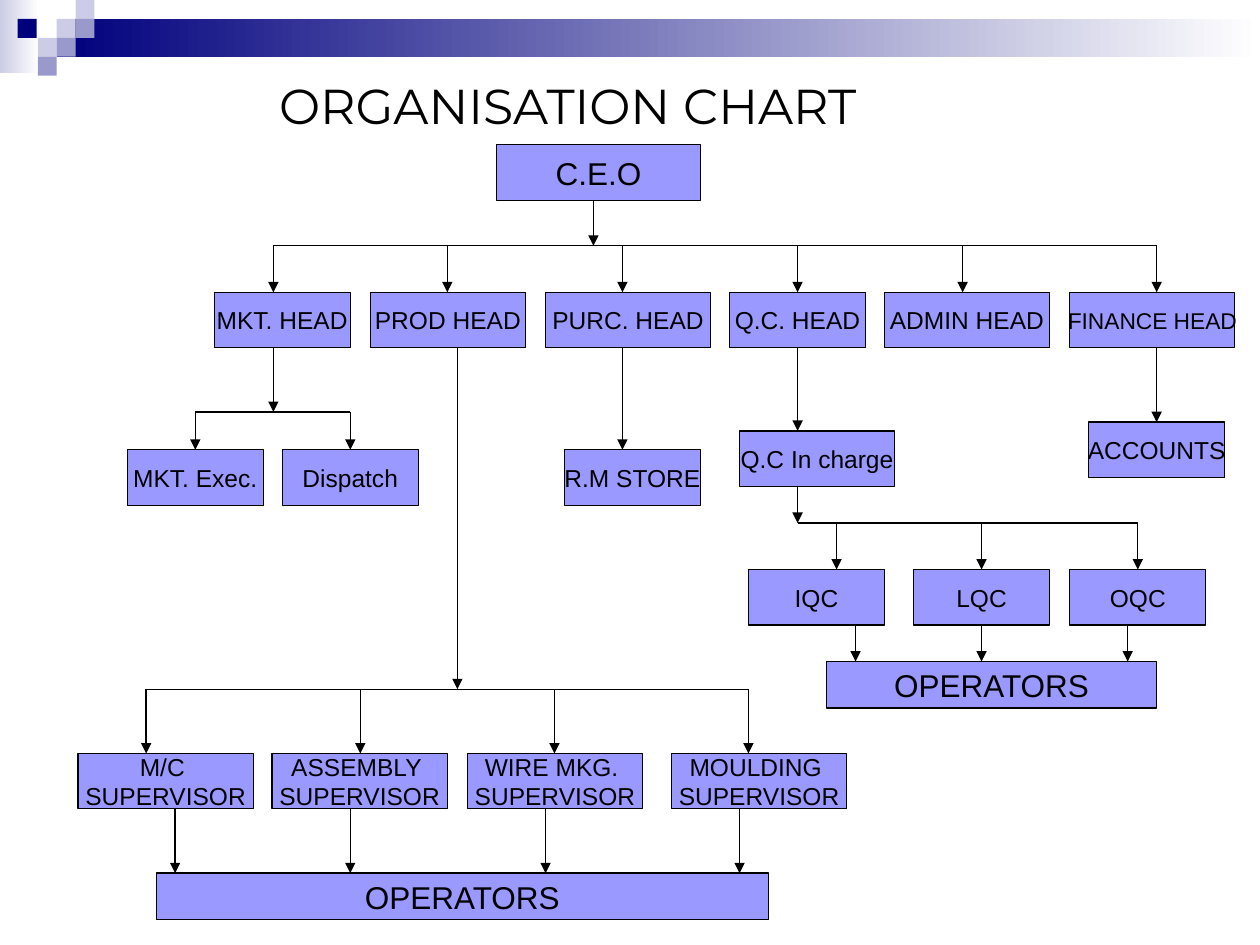
from lxml import etree
from pptx import Presentation
from pptx.dml.color import RGBColor
from pptx.enum.shapes import MSO_CONNECTOR, MSO_SHAPE
from pptx.enum.text import MSO_ANCHOR, MSO_AUTO_SIZE, PP_ALIGN
from pptx.oxml.ns import qn
from pptx.util import Inches, Pt

RECTANGLE = MSO_SHAPE.RECTANGLE
STRAIGHT = MSO_CONNECTOR.STRAIGHT
TOP, MIDDLE = MSO_ANCHOR.TOP, MSO_ANCHOR.MIDDLE
CENTER = PP_ALIGN.CENTER
NO_AUTOFIT = MSO_AUTO_SIZE.NONE
TITLE_ONLY_LAYOUT = 5

THEME = {
    "navy": "00007D", "lavender": "CCCCE6", "violet": "9999CC",
    "white": "FFFFFF", "box": "9999FF", "ink": "000000",
    "title_font": "Montserrat", "box_font": "Arial",
    "title_size": 28, "large": 18, "normal": 14, "small": 13,
    "line_width": 0.75,
}

# Content: each row is (top, height, boxes), each box (left, width, size, lines)
TITLE = "ORGANISATION CHART"
ROWS = [
    (1.15, 0.44, [(3.94, 1.62, "large", ["C.E.O"])]),
    (2.32, 0.44, [
        (1.7, 1.08, "normal", ["MKT. HEAD"]),
        (2.94, 1.23, "normal", ["PROD HEAD"]),
        (4.33, 1.31, "normal", ["PURC. HEAD"]),
        (5.79, 1.08, "normal", ["Q.C. HEAD"]),
        (7.02, 1.31, "normal", ["ADMIN HEAD"]),
        (8.49, 1.31, "small", ["FINANCE HEAD"]),
    ]),
    (3.35, 0.44, [(8.64, 1.08, "normal", ["ACCOUNTS"])]),
    (3.42, 0.44, [(5.87, 1.23, "normal", ["Q.C In charge"])]),
    (3.57, 0.44, [
        (1.01, 1.08, "normal", ["MKT. Exec."]),
        (2.24, 1.08, "normal", ["Dispatch"]),
        (4.48, 1.08, "normal", ["R.M STORE"]),
    ]),
    (4.52, 0.44, [
        (5.94, 1.08, "normal", ["IQC"]),
        (7.25, 1.08, "normal", ["LQC"]),
        (8.49, 1.08, "normal", ["OQC"]),
    ]),
    (5.25, 0.37, [(6.56, 2.62, "large", ["OPERATORS"])]),
    (5.98, 0.44, [
        (0.62, 1.39, "normal", ["M/C ", "SUPERVISOR"]),
        (2.16, 1.39, "normal", ["ASSEMBLY ", "SUPERVISOR"]),
        (3.71, 1.39, "normal", ["WIRE MKG. ", "SUPERVISOR"]),
        (5.33, 1.39, "normal", ["MOULDING ", "SUPERVISOR"]),
    ]),
    (6.93, 0.37, [(1.24, 4.86, "large", ["OPERATORS"])]),
]

# Horizontal bars: (y, left, right)
BARS = [(1.95, 2.17, 9.18), (3.27, 1.55, 2.78),
        (4.15, 6.33, 9.03), (5.47, 1.16, 5.94)]

# Downward arrows: (from y, to y, x positions)
ARROWS = [
    (1.59, 1.95, [4.71]),
    (1.95, 2.32, [2.17, 3.55, 4.94, 6.33, 7.64, 9.18]),
    (2.76, 3.27, [2.17]),
    (2.76, 3.35, [9.18]),
    (2.76, 3.42, [6.33]),
    (2.76, 3.57, [4.94]),
    (2.76, 5.47, [3.63]),
    (3.27, 3.57, [1.55, 2.78]),
    (3.86, 4.15, [6.33]),
    (4.15, 4.52, [6.64, 7.79, 9.03]),
    (4.96, 5.25, [6.79, 7.79, 8.95]),
    (5.47, 5.98, [1.16, 2.86, 4.4, 5.94]),
    (6.42, 6.93, [1.39, 2.78, 4.33, 5.87]),
]

# Header decoration: gradient bands, then small squares (left, top, colour)
BANDS = [(0, 0, 0.31, 0.58, "lavender"), (0.45, 0.15, 9.55, 0.3, "navy")]
SQUARE = 0.15
SQUARES = [
    (0.45, 0.15, "lavender"), (0.6, 0, "lavender"), (0.6, 0.15, "violet"),
    (0.3, 0.3, "lavender"), (0.14, 0.15, "navy"),
    (0.45, 0.3, "violet"), (0.3, 0.45, "violet"),
]


def color(name):
    return RGBColor.from_string(THEME[name])


def add_rectangle(slide, left, top, width, height, fill):
    shape = slide.shapes.add_shape(
        RECTANGLE, Inches(left), Inches(top), Inches(width), Inches(height))
    shape.shadow.inherit = False
    shape.fill.solid()
    shape.fill.fore_color.rgb = color(fill)
    shape.line.fill.background()
    return shape


def add_band(slide, left, top, width, height, start):
    shape = add_rectangle(slide, left, top, width, height, start)
    shape.fill.gradient()
    shape.fill.gradient_angle = 0
    for stop, name, position in zip(shape.fill.gradient_stops, (start, "white"), (0, 1)):
        stop.color.rgb = color(name)
        stop.position = position


def write_text(shape, lines, font_name, size, anchor):
    frame = shape.text_frame
    frame.word_wrap = False
    frame.auto_size = NO_AUTOFIT
    frame.vertical_anchor = anchor
    for index, line in enumerate(lines):
        paragraph = frame.add_paragraph() if index else frame.paragraphs[0]
        paragraph.alignment = CENTER
        run = paragraph.add_run()
        run.text = line
        run.font.name = THEME[font_name]
        run.font.size = Pt(THEME[size])
        run.font.color.rgb = color("ink")


def style_line(line):
    line.color.rgb = color("ink")
    line.width = Pt(THEME["line_width"])


def add_line(slide, start_x, start_y, end_x, end_y, arrow=False):
    connector = slide.shapes.add_connector(
        STRAIGHT, Inches(start_x), Inches(start_y), Inches(end_x), Inches(end_y))
    style_line(connector.line)
    if arrow:
        etree.SubElement(connector.line._get_or_add_ln(), qn("a:tailEnd"), type="triangle")
    etree.SubElement(connector._element.spPr, qn("a:effectLst"))


def main():
    presentation = Presentation()
    presentation.slide_width, presentation.slide_height = Inches(10), Inches(7.5)
    slide = presentation.slides.add_slide(presentation.slide_layouts[TITLE_ONLY_LAYOUT])

    # Header decoration
    for band in BANDS:
        add_band(slide, *band)
    for left, top, fill in SQUARES:
        add_rectangle(slide, left, top, SQUARE, SQUARE, fill)

    # Title
    title = slide.shapes.title
    title.left, title.top = Inches(2), Inches(0.55)
    title.width, title.height = Inches(5.01), Inches(0.36)
    write_text(title, [TITLE], "title_font", "title_size", TOP)

    # Boxes
    for top, height, boxes in ROWS:
        for left, width, size, lines in boxes:
            box = add_rectangle(slide, left, top, width, height, "box")
            style_line(box.line)
            write_text(box, lines, "box_font", size, MIDDLE)

    # Bars and arrows
    for y, left, right in BARS:
        add_line(slide, left, y, right, y)
    for start_y, end_y, positions in ARROWS:
        for x in positions:
            add_line(slide, x, start_y, x, end_y, arrow=True)

    presentation.save("out.pptx")


if __name__ == "__main__":
    main()
